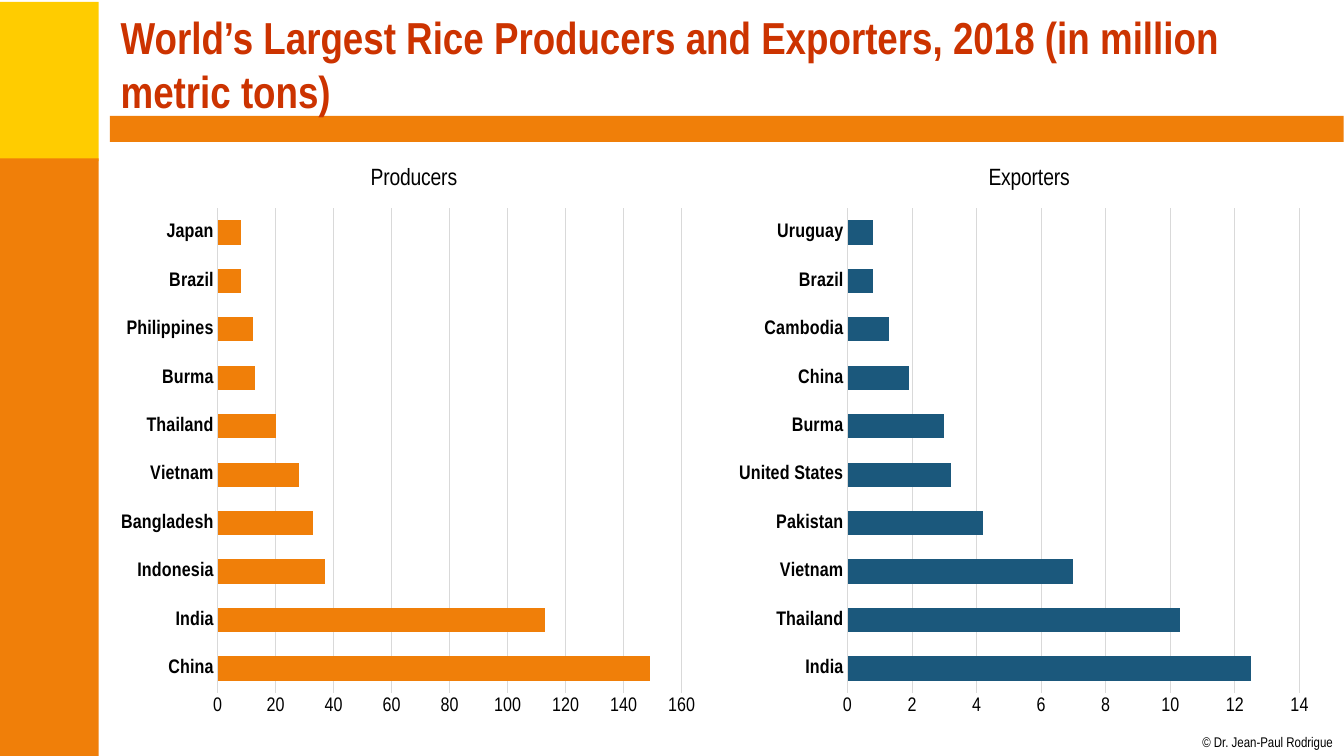
import pptx
import pptx.chart.data
import pptx.dml.color
import pptx.enum.chart
import pptx.enum.shapes
import pptx.enum.text
import pptx.oxml
import pptx.util
from pptx.util import Cm, Pt

FONT = "Arial Narrow"
COLORS = {
    "yellow": "FFCC00",
    "orange": "F07F09",
    "blue": "1B587C",
    "title": "CC3300",
    "text": "000000",
    "grid": "D9D9D9",
}

# Content
TITLE = "World’s Largest Rice Producers and Exporters, 2018 (in million metric tons)"
COPYRIGHT = "© Dr. Jean-Paul Rodrigue"
PRODUCERS = [
    ("China", 149), ("India", 113), ("Indonesia", 37), ("Bangladesh", 33),
    ("Vietnam", 28), ("Thailand", 20), ("Burma", 13), ("Philippines", 12),
    ("Brazil", 8), ("Japan", 8),
]
EXPORTERS = [
    ("India", 12.5), ("Thailand", 10.3), ("Vietnam", 7), ("Pakistan", 4.2),
    ("United States", 3.2), ("Burma", 3), ("China", 1.9), ("Cambodia", 1.3),
    ("Brazil", 0.8), ("Uruguay", 0.8),
]
# Title, data, color, left (cm), axis maximum, axis step, plot left and width (share of chart)
CHARTS = [
    ("Producers", PRODUCERS, "orange", 2.79, 160, 20, 0.18, 0.78),
    ("Exporters", EXPORTERS, "blue", 18.36, 14, 2, 0.2, 0.76),
]
# Color, left, top, width, height (cm)
BANDS = [
    ("yellow", -0.05, 0.05, 2.54, 4.01),
    ("orange", -0.05, 3.99, 2.54, 15.06),
    ("orange", 2.77, 2.92, 31.09, 0.66),
]


def rgb(name):
    return pptx.dml.color.RGBColor.from_string(COLORS[name])


def style_font(font, size, color="text", bold=False):
    font.name = FONT
    font.size = Pt(size)
    font.bold = bold
    font.color.rgb = rgb(color)


def style_line(line, color):
    line.color.rgb = rgb(color)
    line.width = Pt(0.75)


def add_text(slide, text, box, size, color="text", bold=False):
    text_frame = slide.shapes.add_textbox(*map(Cm, box)).text_frame
    text_frame.text = text
    style_font(text_frame.paragraphs[0].runs[0].font, size, color, bold)
    return text_frame


def make_layout(target="", **shares):
    """Manual chart layout, with positions as shares of the chart size."""
    namespace = "http://schemas.openxmlformats.org/drawingml/2006/chart"
    inner = f'<c:layoutTarget val="{target}"/>' if target else ""
    inner += '<c:xMode val="edge"/><c:yMode val="edge"/>'
    inner += "".join(f'<c:{key} val="{share}"/>' for key, share in shares.items())
    return pptx.oxml.parse_xml(
        f'<c:layout xmlns:c="{namespace}"><c:manualLayout>{inner}</c:manualLayout></c:layout>'
    )


def set_layout(parent, layout, position):
    for old in parent.findall(layout.tag):
        parent.remove(old)
    parent.insert(position, layout)


def add_bar_chart(slide, title, data, color, left, maximum, step, plot_left, plot_width):
    chart_data = pptx.chart.data.CategoryChartData()
    chart_data.categories = [country for country, tons in data]
    chart_data.add_series(title, [tons for country, tons in data])
    chart = slide.shapes.add_chart(
        pptx.enum.chart.XL_CHART_TYPE.BAR_CLUSTERED,
        Cm(left), Cm(3.63), Cm(14.99), Cm(14.71), chart_data,
    ).chart
    style_font(chart.font, 14)
    chart.has_legend = False

    # Chart title
    chart.has_title = True
    chart.chart_title.text_frame.text = title
    style_font(chart.chart_title.text_frame.paragraphs[0].runs[0].font, 16.8)
    chart.chart_title.include_in_layout = False
    set_layout(chart.chart_title._element, make_layout(x=0.43, y=0.03), 1)
    plot_layout = make_layout("inner", x=plot_left, y=0.11, w=plot_width, h=0.83)
    set_layout(chart._chartSpace.chart.plotArea, plot_layout, 0)

    # Bars
    plot = chart.plots[0]
    plot.gap_width = 100
    plot.vary_by_categories = False
    fill = plot.series[0].format.fill
    fill.solid()
    fill.fore_color.rgb = rgb(color)

    # Axes
    for axis, bold in ((chart.category_axis, True), (chart.value_axis, False)):
        axis.major_tick_mark = pptx.enum.chart.XL_TICK_MARK.NONE
        axis.minor_tick_mark = pptx.enum.chart.XL_TICK_MARK.NONE
        style_font(axis.tick_labels.font, 14, bold=bold)
    style_line(chart.category_axis.format.line, "grid")
    value_axis = chart.value_axis
    value_axis.minimum_scale = 0
    value_axis.maximum_scale = maximum
    value_axis.major_unit = step
    value_axis.tick_labels.number_format = "General"
    value_axis.tick_labels.number_format_is_linked = False
    value_axis.format.line.fill.background()
    style_line(value_axis.major_gridlines.format.line, "grid")


def main():
    presentation = pptx.Presentation()
    presentation.slide_width = Cm(33.87)
    presentation.slide_height = Cm(19.05)
    slide = presentation.slides.add_slide(presentation.slide_layouts[6])

    # Color bands
    for color, *box in BANDS:
        band = slide.shapes.add_shape(
            pptx.enum.shapes.MSO_SHAPE.RECTANGLE, *map(Cm, box)
        )
        band.shadow.inherit = False
        band.fill.solid()
        band.fill.fore_color.rgb = rgb(color)
        band.line.fill.background()

    # Copyright line
    copyright_frame = add_text(slide, COPYRIGHT, (30.3, 18.49, 3.33, 0.43), 10)
    copyright_frame.word_wrap = False
    copyright_frame.margin_left = copyright_frame.margin_right = 0
    copyright_frame.margin_top = copyright_frame.margin_bottom = 0

    # Slide title
    title_frame = add_text(slide, TITLE, (2.79, 0.28, 30.48, 2.64), 32, "title", True)
    title_frame.word_wrap = True
    title_frame.vertical_anchor = pptx.enum.text.MSO_ANCHOR.MIDDLE

    # Charts
    for chart_values in CHARTS:
        add_bar_chart(slide, *chart_values)

    presentation.save("out.pptx")


if __name__ == "__main__":
    main()
